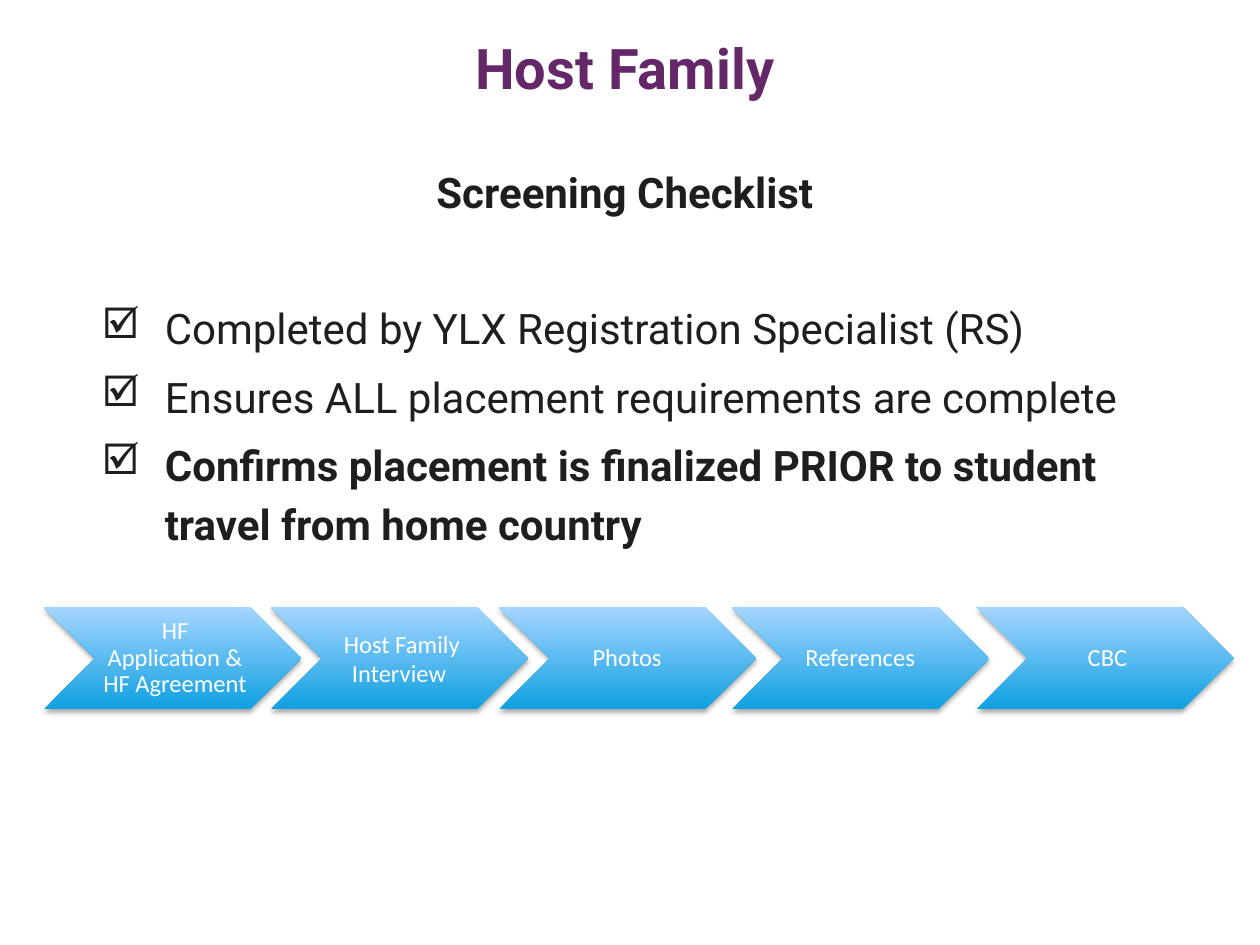
from lxml import etree
from pptx import Presentation
from pptx.dml.color import RGBColor
from pptx.enum.shapes import MSO_SHAPE as Shape
from pptx.enum.text import MSO_ANCHOR as Anchor, MSO_AUTO_SIZE as AutoSize, PP_ALIGN as Align
from pptx.oxml.ns import qn
from pptx.util import Inches, Pt

COLORS = {
    "title": "642869",
    "body": "1E1E1E",
    "step_text": "FFFFFF",
    "step_bottom": "0FA0E1",
    "step_top": "A5D5FF",
    "shadow": "000000",
}
CHECKS = [
    ("Completed by YLX Registration Specialist (RS)", False),
    ("Ensures ALL placement requirements are complete", False),
    ("Confirms placement is finalized PRIOR to student travel from home country", True),
]
STEP_TOP = 4.82
# label (\v breaks a line), left, line spacing
STEPS = [
    ("HF\vApplication &\vHF Agreement", 0.35, 0.9),
    ("Host Family Interview ", 2.15, 1.0),
    ("Photos ", 3.96, 0.9),
    ("References ", 5.81, 0.9),
    ("CBC", 7.75, 0.9),
]


def write(paragraph, text, *, size, font, color, bold=False, align=Align.LEFT,
          line_spacing=None, space_after=None):
    paragraph.text = text
    paragraph.alignment = align
    paragraph.line_spacing = line_spacing
    paragraph.space_after = space_after
    for run in paragraph.runs:
        run.font.size, run.font.name, run.font.bold = Pt(size), font, bold
        run.font.color.rgb = RGBColor.from_string(COLORS[color])


def add_check_bullet(paragraph):
    """Add a ticked box, which Wingdings keeps at the place of the letter þ."""
    properties = paragraph._p.get_or_add_pPr()
    properties.set("marL", str(Inches(0.5)))
    properties.set("indent", str(-Inches(0.5)))
    etree.SubElement(properties, qn("a:buFont"), typeface="Wingdings",
                     pitchFamily="2", charset="2")
    etree.SubElement(properties, qn("a:buChar"), char="þ")


def add_shadow(shape):
    """Give the shape a soft shadow straight below it."""
    effects = etree.SubElement(shape._element.spPr, qn("a:effectLst"))
    shadow = etree.SubElement(effects, qn("a:outerShdw"), blurRad=str(Pt(3.1)),
                              dist=str(Pt(1.8)), dir="5400000", rotWithShape="0")
    color = etree.SubElement(shadow, qn("a:srgbClr"), val=COLORS["shadow"])
    etree.SubElement(color, qn("a:alpha"), val="35000")


class SlideBuilder:
    heading_font = "Roboto"
    step_font = "Calibri"
    body_spacing = Pt(34)
    body_gap = Pt(5)

    def __init__(self, presentation):
        self.slide = presentation.slides.add_slide(presentation.slide_layouts[5])

    def title(self, text):
        title = self.slide.shapes.title
        title.left, title.top = Inches(0.71), Inches(0.2)
        title.width, title.height = Inches(8.5), Inches(0.67)
        frame = title.text_frame
        frame.auto_size = AutoSize.NONE
        frame.vertical_anchor = Anchor.MIDDLE
        write(frame.paragraphs[0], text, size=32, font=self.heading_font,
              color="title", bold=True, align=Align.CENTER)

    def checklist(self, heading, checks):
        box = self.slide.shapes.add_textbox(Inches(0.71), Inches(1.2), Inches(8.5), Inches(5.28))
        frame = box.text_frame
        frame.word_wrap = True
        style = dict(size=24, font=self.heading_font, color="body",
                     line_spacing=self.body_spacing)
        write(frame.paragraphs[0], heading, bold=True, align=Align.CENTER,
              space_after=self.body_spacing + 2 * self.body_gap, **style)
        for text, bold in checks:
            paragraph = frame.add_paragraph()
            write(paragraph, text, bold=bold, space_after=self.body_gap, **style)
            add_check_bullet(paragraph)

    def step(self, label, left, line_spacing):
        chevron = self.slide.shapes.add_shape(
            Shape.CHEVRON, Inches(left), Inches(STEP_TOP), Inches(2.04), Inches(0.81))
        chevron.fill.gradient()
        chevron.fill.gradient_angle = 90
        for stop, name in zip(chevron.fill.gradient_stops, ("step_bottom", "step_top")):
            stop.color.rgb = RGBColor.from_string(COLORS[name])
        chevron.line.fill.background()
        add_shadow(chevron)
        frame = chevron.text_frame
        frame.word_wrap = True
        frame.vertical_anchor = Anchor.MIDDLE
        frame.margin_left = Inches(0.06)
        frame.margin_top = frame.margin_right = frame.margin_bottom = Inches(0.02)
        write(frame.paragraphs[0], label, size=14, font=self.step_font,
              color="step_text", align=Align.CENTER, line_spacing=line_spacing)


def main():
    presentation = Presentation()
    presentation.slide_width, presentation.slide_height = Inches(10), Inches(7.5)
    builder = SlideBuilder(presentation)
    builder.title("Host Family")
    builder.checklist("Screening Checklist", CHECKS)
    for label, left, line_spacing in STEPS:
        builder.step(label, left, line_spacing)
    presentation.save("out.pptx")


if __name__ == "__main__":
    main()
